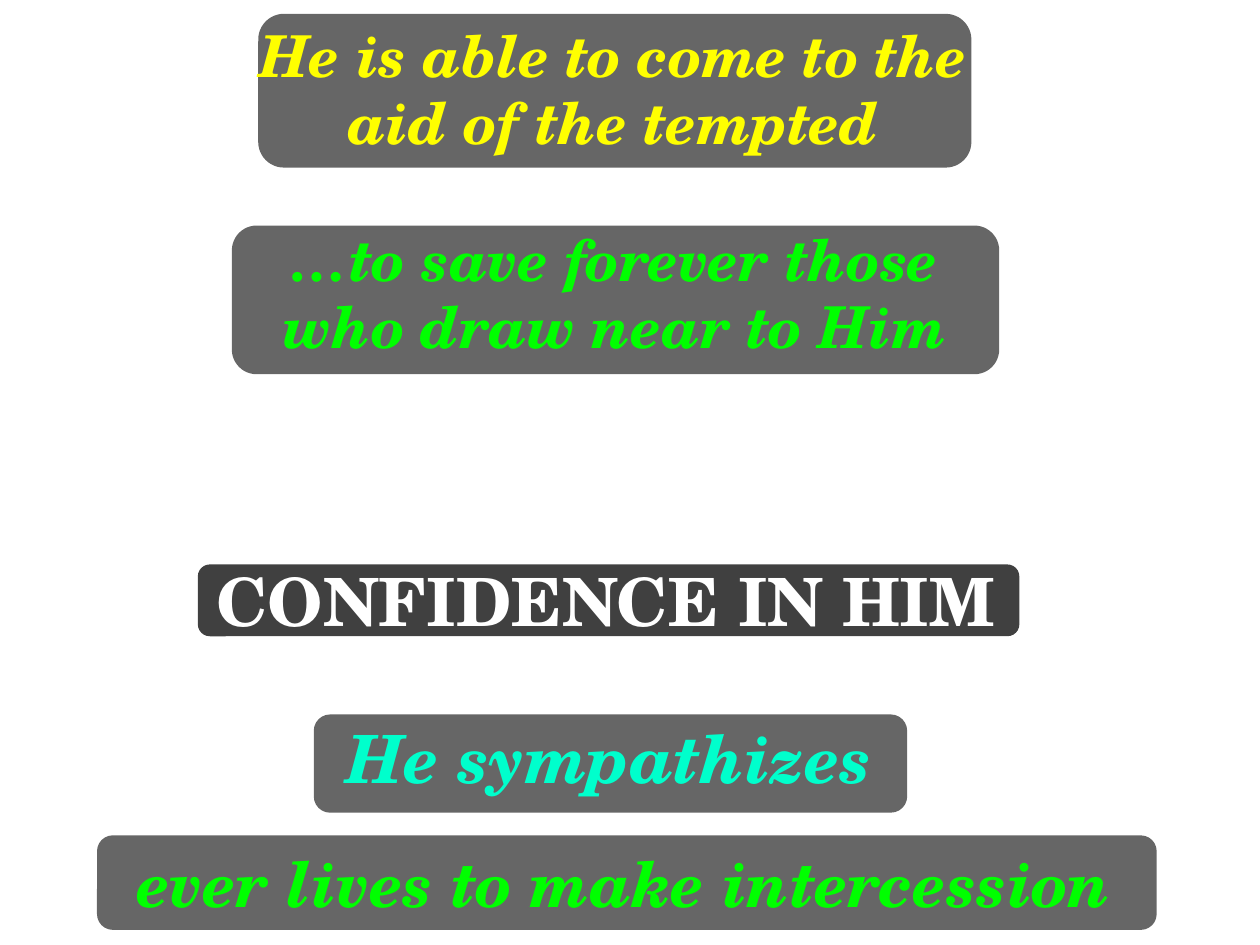
import pptx
import pptx.util
import pptx.dml.color
import pptx.enum.shapes
import pptx.enum.text
import pptx.oxml.ns
import lxml.etree

Inches = pptx.util.Inches
Pt = pptx.util.Pt


def color(value):
    return pptx.dml.color.RGBColor.from_string(value)


presentation = pptx.Presentation()
presentation.slide_width = Inches(10)
presentation.slide_height = Inches(7.5)
slide = presentation.slides.add_slide(presentation.slide_layouts[6])

panels = [
    (1.57, 4.48, 6.52, 0.57, 75),
    (2.05, 0.11, 5.66, 1.22, 60),
    (1.84, 1.79, 6.09, 1.18, 60),
    (0.77, 6.63, 8.41, 0.75, 60),
    (2.49, 5.67, 4.71, 0.78, 60),
]
for left, top, width, height, opacity in panels:
    panel = slide.shapes.add_shape(
        pptx.enum.shapes.MSO_SHAPE.ROUNDED_RECTANGLE,
        Inches(left), Inches(top), Inches(width), Inches(height))
    panel.shadow.inherit = False
    panel.line.fill.background()
    panel.fill.solid()
    panel.fill.fore_color.rgb = color("000000")
    black = panel.fill._xPr.find(".//" + pptx.oxml.ns.qn("a:srgbClr"))
    alpha = lxml.etree.SubElement(black, pptx.oxml.ns.qn("a:alpha"))
    alpha.set("val", str(opacity * 1000))

phrases = [
    ("CONFIDENCE IN HIM", 1.44, 4.5, 6.74, 0.63, 38, 38, "FFFFFF", False),
    ("He is able to come to the aid of the tempted", 1.9, 0.13, 5.93, 1.17, 33, 38, "FFFF00", True),
    ("ever lives to make intercession", 0.62, 6.63, 8.67, 0.73, 36, 45, "00FF00", True),
    ("He sympathizes", 2.45, 5.65, 4.77, 0.73, 38, 45, "00FFCC", True),
    ("…to save forever those who draw near to Him", 1.83, 1.75, 6.1, 1.17, 33, 38, "00FF00", True),
]
for wording, left, top, width, height, size, spacing, hue, italic in phrases:
    phrase = slide.shapes.add_textbox(Inches(left), Inches(top), Inches(width), Inches(height))
    frame = phrase.text_frame
    frame.word_wrap = True
    frame.auto_size = pptx.enum.text.MSO_AUTO_SIZE.SHAPE_TO_FIT_TEXT
    frame.text = wording
    paragraph = frame.paragraphs[0]
    paragraph.alignment = pptx.enum.text.PP_ALIGN.CENTER
    paragraph.line_spacing = Pt(spacing)
    font = paragraph.runs[0].font
    font.name = "TeX Gyre Schola"
    font.size = Pt(size)
    font.bold = True
    font.italic = italic
    font.color.rgb = color(hue)

presentation.save("out.pptx")
